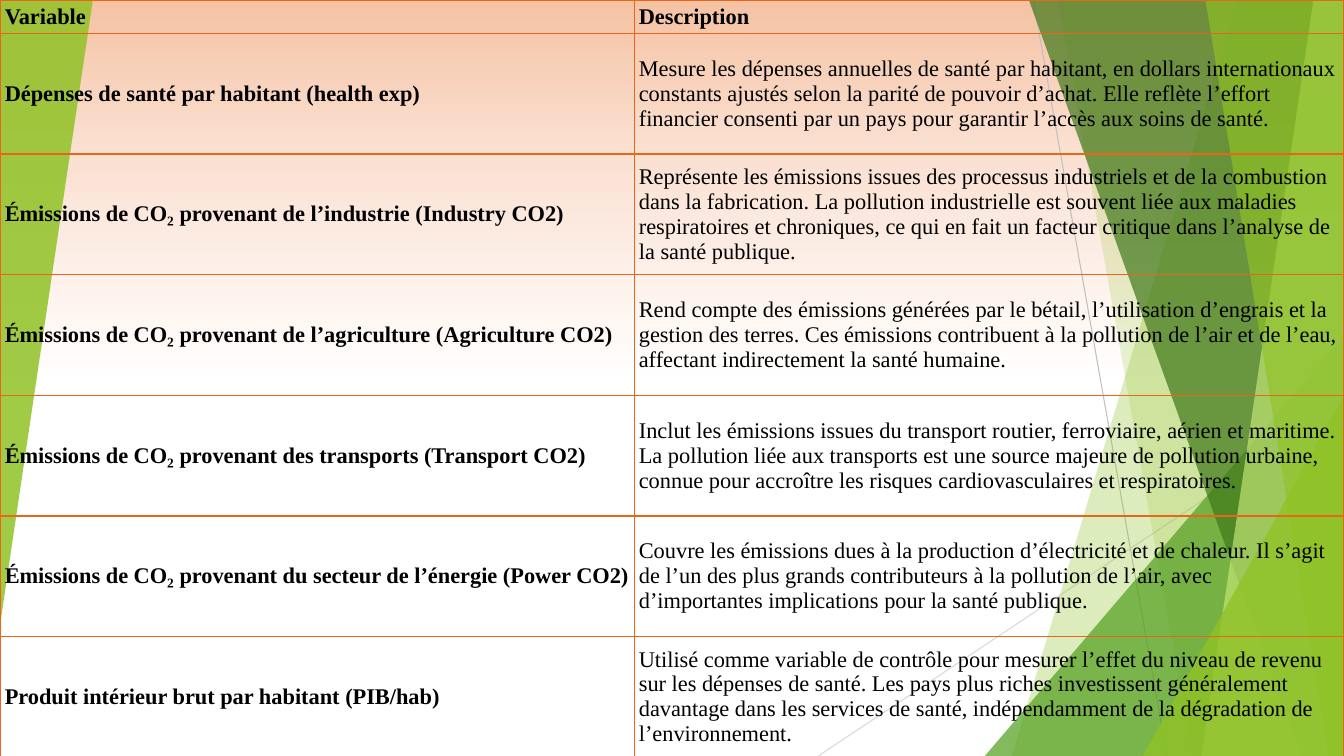
"""Build a slide with a table of study variables over green translucent facets."""
from copy import deepcopy
from dataclasses import dataclass

from lxml import etree
from pptx import Presentation
from pptx import util as u
from pptx.dml import color
from pptx.enum import shapes, text
from pptx.oxml import ns

WIDTH, HEIGHT = 33.87, 19.05
GREEN = "90C226"
BORDER = "E76618"
GRADIENT = [(0, "F5C2A3"), (0.2, "FAE0D1"), (0.51, "FFFFFF")]
COLUMN_WIDTHS = [15.98, 17.89]
HEADER_HEIGHT, ROW_HEIGHT = 0.84, 3.04


@dataclass
class Ray:
    start: tuple[float, float]
    end: tuple[float, float]
    colour: str


@dataclass
class Facet:
    top_x: float
    bottom_x: float
    colour: str
    opacity: int


@dataclass
class Triangle:
    left: float
    top: float
    width: float
    height: float
    colour: str
    opacity: int
    rotation: int = 0


@dataclass
class Variable:
    name: str
    description: str
    justified: bool = False


RAYS = [
    Ray((26.04, 0), (29.41, HEIGHT), "BFBFBF"),
    Ray((WIDTH, 10.24), (20.62, HEIGHT), "D9D9D9"),
]
DECORATIONS = [
    Facet(31.19, 25.5, GREEN, 30),
    Facet(26.67, 30.05, GREEN, 20),
    Triangle(24.82, 8.46, 9.05, 10.59, "54A021", 72),
    Facet(25.93, 32.79, "3F7819", 70),
    Facet(33.1, 30.28, "C0E474", 70),
    Facet(30.38, 33.48, GREEN, 65),
    Triangle(28.8, 9.98, 5.07, 9.07, GREEN, 80),
    Triangle(0, 0, 2.34, 15.75, GREEN, 85, 180),
]
VARIABLES = [
    Variable(
        "Dépenses de santé par habitant (health exp)",
        "Mesure les dépenses annuelles de santé par habitant, en dollars internationaux "
        "constants ajustés selon la parité de pouvoir d’achat. Elle reflète l’effort "
        "financier consenti par un pays pour garantir l’accès aux soins de santé."),
    Variable(
        "Émissions de CO₂ provenant de l’industrie (Industry CO2)",
        "Représente les émissions issues des processus industriels et de la combustion "
        "dans la fabrication. La pollution industrielle est souvent liée aux maladies "
        "respiratoires et chroniques, ce qui en fait un facteur critique dans l’analyse "
        "de la santé publique.", justified=True),
    Variable(
        "Émissions de CO₂ provenant de l’agriculture (Agriculture CO2)",
        "Rend compte des émissions générées par le bétail, l’utilisation d’engrais et la "
        "gestion des terres. Ces émissions contribuent à la pollution de l’air et de "
        "l’eau, affectant indirectement la santé humaine."),
    Variable(
        "Émissions de CO₂ provenant des transports (Transport CO2)",
        "Inclut les émissions issues du transport routier, ferroviaire, aérien et "
        "maritime. La pollution liée aux transports est une source majeure de pollution "
        "urbaine, connue pour accroître les risques cardiovasculaires et respiratoires."),
    Variable(
        "Émissions de CO₂ provenant du secteur de l’énergie (Power CO2)",
        "Couvre les émissions dues à la production d’électricité et de chaleur. Il s’agit "
        "de l’un des plus grands contributeurs à la pollution de l’air, avec "
        "d’importantes implications pour la santé publique."),
    Variable(
        "Produit intérieur brut par habitant (PIB/hab)",
        "Utilisé comme variable de contrôle pour mesurer l’effet du niveau de revenu sur "
        "les dépenses de santé. Les pays plus riches investissent généralement davantage "
        "dans les services de santé, indépendamment de la dégradation de "
        "l’environnement."),
]


def set_colour(target, colour: str) -> None:
    target.rgb = color.RGBColor.from_string(colour)


def paint_background(slide) -> None:
    fill = slide.background.fill
    fill.gradient()
    fill.gradient_angle = 270
    stop_list = slide.element.find(".//" + ns.qn("a:gsLst"))
    stop_list.append(deepcopy(stop_list[-1]))
    for stop, (position, colour) in zip(fill.gradient_stops, GRADIENT):
        stop.position = position
        set_colour(stop.color, colour)


def draw_ray(slide, ray: Ray) -> None:
    points = [u.Cm(value) for value in (*ray.start, *ray.end)]
    connector = slide.shapes.add_connector(shapes.MSO_CONNECTOR.STRAIGHT, *points)
    connector.line.width = u.Pt(0.75)
    set_colour(connector.line.color, ray.colour)
    etree.SubElement(connector.element.spPr, ns.qn("a:effectLst"))


def add_facet(slide, facet: Facet):
    builder = slide.shapes.build_freeform(u.Cm(facet.top_x), 0)
    corners = [(WIDTH, 0), (WIDTH, HEIGHT), (facet.bottom_x, HEIGHT)]
    builder.add_line_segments([(u.Cm(x), u.Cm(y)) for x, y in corners])
    return builder.convert_to_shape()


def add_triangle(slide, triangle: Triangle):
    box = (triangle.left, triangle.top, triangle.width, triangle.height)
    shape = slide.shapes.add_shape(
        shapes.MSO_SHAPE.ISOSCELES_TRIANGLE, *(u.Cm(value) for value in box))
    shape.adjustments[0] = 1
    shape.rotation = triangle.rotation
    return shape


def draw_decoration(slide, decoration: Facet | Triangle) -> None:
    add = add_facet if isinstance(decoration, Facet) else add_triangle
    shape = add(slide, decoration)
    shape.shadow.inherit = False
    shape.line.fill.background()
    shape.fill.solid()
    set_colour(shape.fill.fore_color, decoration.colour)
    fill_colour = shape.element.find(".//" + ns.qn("a:srgbClr"))
    etree.SubElement(fill_colour, ns.qn("a:alpha"), val=str(decoration.opacity * 1000))


def add_borders(cell) -> None:
    properties = cell._tc.get_or_add_tcPr()
    for side in ("lnL", "lnR", "lnT", "lnB"):
        line = etree.SubElement(properties, ns.qn(f"a:{side}"), w=str(u.Pt(1)))
        fill = etree.SubElement(line, ns.qn("a:solidFill"))
        etree.SubElement(fill, ns.qn("a:srgbClr"), val=BORDER)


def write_cell(cell, content: str, bold: bool, justified: bool = False) -> None:
    add_borders(cell)
    cell.fill.background()
    cell.vertical_anchor = text.MSO_ANCHOR.MIDDLE
    cell.margin_left = cell.margin_right = u.Cm(0.12)
    cell.margin_top = cell.margin_bottom = u.Cm(0.04)
    cell.text = content
    paragraph = cell.text_frame.paragraphs[0]
    paragraph.alignment = text.PP_ALIGN.JUSTIFY if justified else text.PP_ALIGN.LEFT
    font = paragraph.font
    font.name, font.size, font.bold = "Times New Roman", u.Pt(16), bold
    set_colour(font.color, "000000")


def draw_table(slide, variables: list[Variable]) -> None:
    rows = [Variable("Variable", "Description"), *variables]
    height = HEADER_HEIGHT + ROW_HEIGHT * len(variables)
    table = slide.shapes.add_table(
        len(rows), len(COLUMN_WIDTHS), 0, 0, u.Cm(WIDTH), u.Cm(height)).table
    table.first_row = table.horz_banding = False
    for column, width in zip(table.columns, COLUMN_WIDTHS):
        column.width = u.Cm(width)
    for index, variable in enumerate(rows):
        is_header = index == 0
        table.rows[index].height = u.Cm(HEADER_HEIGHT if is_header else ROW_HEIGHT)
        write_cell(table.cell(index, 0), variable.name, True, variable.justified)
        write_cell(table.cell(index, 1), variable.description, is_header)


def main() -> None:
    presentation = Presentation()
    presentation.slide_width, presentation.slide_height = u.Cm(WIDTH), u.Cm(HEIGHT)
    slide = presentation.slides.add_slide(presentation.slide_layouts[6])
    paint_background(slide)
    for ray in RAYS:
        draw_ray(slide, ray)
    for decoration in DECORATIONS:
        draw_decoration(slide, decoration)
    draw_table(slide, VARIABLES)
    presentation.save("out.pptx")


if __name__ == "__main__":
    main()
